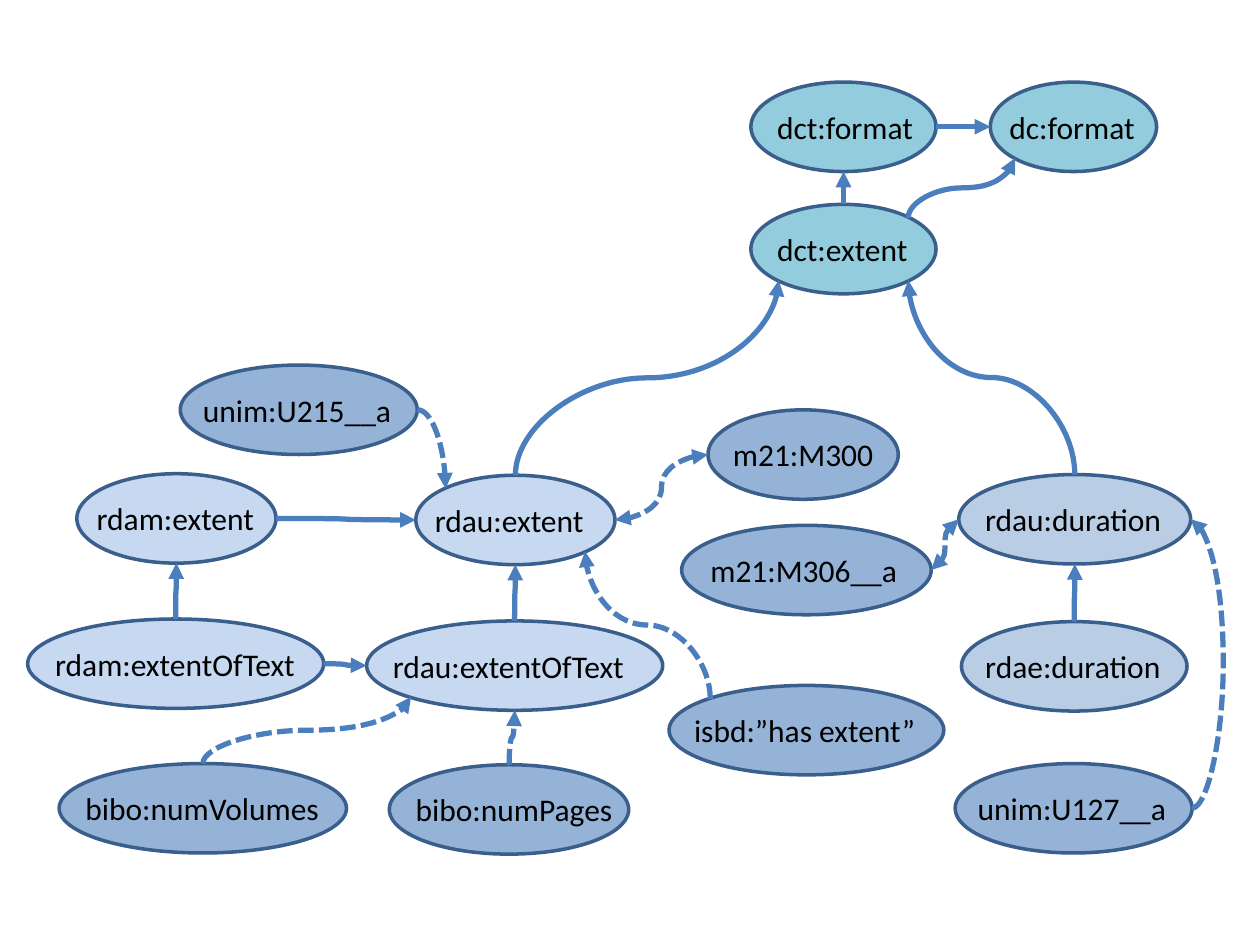
from lxml.etree import SubElement
from pptx import Presentation
from pptx.dml.color import RGBColor
from pptx.enum.dml import MSO_LINE
from pptx.enum.shapes import MSO_CONNECTOR, MSO_SHAPE
from pptx.enum.text import MSO_AUTO_SIZE
from pptx.oxml.ns import qn
from pptx.util import Pt

TEAL = RGBColor(0x93, 0xCD, 0xDD)
BLUE = RGBColor(0x95, 0xB3, 0xD7)
PALE = RGBColor(0xC6, 0xD9, 0xF1)
GREY_BLUE = RGBColor(0xB9, 0xCD, 0xE5)
OUTLINE = RGBColor(0x3A, 0x5F, 0x8C)
ARROW = RGBColor(0x4B, 0x7E, 0xBC)
BLACK = RGBColor(0, 0, 0)

NODE_H = 51.1
LABEL_H = 29
LABEL_DY = 11.1
LOOP_BULGE = 18
DIAGONAL = 0.15
SITES = {
    "top": (0.5, 0), "bottom": (0.5, 1), "left": (0, 0.5), "right": (1, 0.5),
    "top left": (DIAGONAL, DIAGONAL), "top right": (1 - DIAGONAL, DIAGONAL),
    "bottom left": (DIAGONAL, 1 - DIAGONAL),
    "bottom right": (1 - DIAGONAL, 1 - DIAGONAL),
}

# name: left, top, width, label inset, label width, fill
NODES = {
    "bibo:numPages": (222.5, 437, 136.8, 7.9, 128.2, BLUE),
    "bibo:numVolumes": (33.8, 436.3, 164.2, 7.9, 149.8, BLUE),
    "rdam:extent": (43.9, 270.7, 113.8, 4.3, 105.1, PALE),
    "isbd:”has extent”": (382.3, 391.7, 157, 7.2, 142.6, BLUE),
    "dct:extent": (429.1, 116.8, 105.8, 7.9, 90, TEAL),
    "rdam:extentOfText": (15.8, 353.7, 169.2, 8.6, 152.6, PALE),
    "dct:format": (429.1, 46.9, 105.8, 7.9, 92.9, TEAL),
    "rdau:extent": (237.6, 271.6, 113.8, 3.8, 100.8, PALE),
    "rdau:extentOfText": (209.5, 354.8, 169.2, 7.9, 148.3, PALE),
    "dc:format": (565.9, 46.9, 95, 3.8, 87.1, TEAL),
    "rdau:duration": (547.9, 271.2, 132.5, 7.9, 116.6, GREY_BLUE),
    "rdae:duration": (549.4, 355.2, 128.9, 6.5, 115.9, GREY_BLUE),
    "m21:M306__a": (389.5, 300.2, 142.6, 9.4, 122.4, BLUE),
    "m21:M300": (404.6, 234.2, 108.7, 7.2, 95.8, BLUE),
    "unim:U127__a": (545.8, 436.3, 135.4, 5.8, 123.1, BLUE),
    "unim:U215__a": (103, 208.6, 135.4, 5.8, 123.1, BLUE),
}

RISING = [
    ("dct:extent", "top", "dct:format", "bottom", False),
    ("dct:extent", "top right", "dc:format", "bottom left", False),
    ("rdau:extent", "top", "dct:extent", "bottom left", False),
    ("rdau:duration", "top", "dct:extent", "bottom right", False),
    ("rdam:extentOfText", "top", "rdam:extent", "bottom", False),
    ("rdau:extentOfText", "top", "rdau:extent", "bottom", False),
    ("rdae:duration", "top", "rdau:duration", "bottom", False),
    ("bibo:numPages", "top", "rdau:extentOfText", "bottom", True),
    ("bibo:numVolumes", "top", "rdau:extentOfText", "bottom left", True),
    ("isbd:”has extent”", "top left", "rdau:extent", "bottom right", True),
]
ACROSS = [
    ("dct:format", "dc:format"),
    ("rdam:extent", "rdau:extent"),
    ("rdam:extentOfText", "rdau:extentOfText"),
]
TWO_WAY = [
    ("m21:M306__a", "right", "rdau:duration", "left"),
    ("m21:M300", "left", "rdau:extent", "right"),
]


def site(name, side):
    left, top, width = NODES[name][:3]
    fx, fy = SITES[side]
    return left + fx * width, top + fy * NODE_H


def add_node(s, name):
    left, top, width, inset, label_w, fill = NODES[name]
    group = s.shapes.add_group_shape()
    sp = group.shapes.add_shape(MSO_SHAPE.OVAL, Pt(left), Pt(top), Pt(width), Pt(NODE_H))
    sp.shadow.inherit = False
    sp.fill.solid()
    sp.fill.fore_color.rgb = fill
    sp.line.color.rgb = OUTLINE
    sp.line.width = Pt(2)
    label = group.shapes.add_textbox(
        Pt(left + inset), Pt(top + LABEL_DY), Pt(label_w), Pt(LABEL_H))
    tf = label.text_frame
    tf.word_wrap = False
    tf.auto_size = MSO_AUTO_SIZE.SHAPE_TO_FIT_TEXT
    tf.text = name
    r = tf.paragraphs[0].runs[0]
    r.font.name = "Calibri"
    r.font.size = Pt(18)
    r.font.color.rgb = BLACK


def add_curve(s, start, end, dashed=False, two_way=False):
    cxn = s.shapes.add_connector(MSO_CONNECTOR.CURVE, *map(Pt, start + end))
    cxn.line.color.rgb = ARROW
    cxn.line.width = Pt(3)
    if dashed:
        cxn.line.dash_style = MSO_LINE.SQUARE_DOT
    ln = cxn.line._get_or_add_ln()
    if two_way:
        SubElement(ln, qn("a:headEnd"), type="triangle")
    SubElement(ln, qn("a:tailEnd"), type="triangle")
    SubElement(cxn.element.spPr, qn("a:effectLst"))
    return cxn


def add_rising_curve(s, start, end, dashed):
    (x1, y1), (x2, y2) = start, end
    cx, cy = (x1 + x2) / 2, (y1 + y2) / 2
    half_w, half_h = (y1 - y2) / 2, abs(x2 - x1) / 2
    turn = 90
    if x2 < x1:
        half_w, turn = -half_w, 270
    cxn = add_curve(s, (cx + half_w, cy + half_h), (cx - half_w, cy - half_h), dashed)
    cxn.element.spPr.find(qn("a:xfrm")).set("rot", str(turn * 60000))


def add_loop(s, start, end):
    cxn = add_curve(s, start, end, dashed=True)
    adjust = round(-LOOP_BULGE / (start[0] - end[0]) * 100000)
    guides = cxn.element.spPr.find(qn("a:prstGeom")).find(qn("a:avLst"))
    SubElement(guides, qn("a:gd"), name="adj1", fmla=f"val {adjust}")


def add_bend(s, start, end):
    cxn = add_curve(s, start, end, dashed=True)
    cxn.element.spPr.find(qn("a:prstGeom")).set("prst", "curvedConnector2")


def main():
    prs = Presentation()
    prs.slide_width, prs.slide_height = Pt(720), Pt(540)
    s = prs.slides.add_slide(prs.slide_layouts[6])
    for name in NODES:
        add_node(s, name)
    for lower, side, upper, upper_side, dashed in RISING:
        add_rising_curve(s, site(lower, side), site(upper, upper_side), dashed)
    for source, target in ACROSS:
        add_curve(s, site(source, "right"), site(target, "left"))
    for source, side, target, target_side in TWO_WAY:
        add_curve(s, site(source, side), site(target, target_side), dashed=True, two_way=True)
    add_loop(s, site("unim:U127__a", "right"), site("rdau:duration", "right"))
    add_bend(s, site("unim:U215__a", "right"), site("rdau:extent", "top left"))
    prs.save("out.pptx")


if __name__ == "__main__":
    main()
